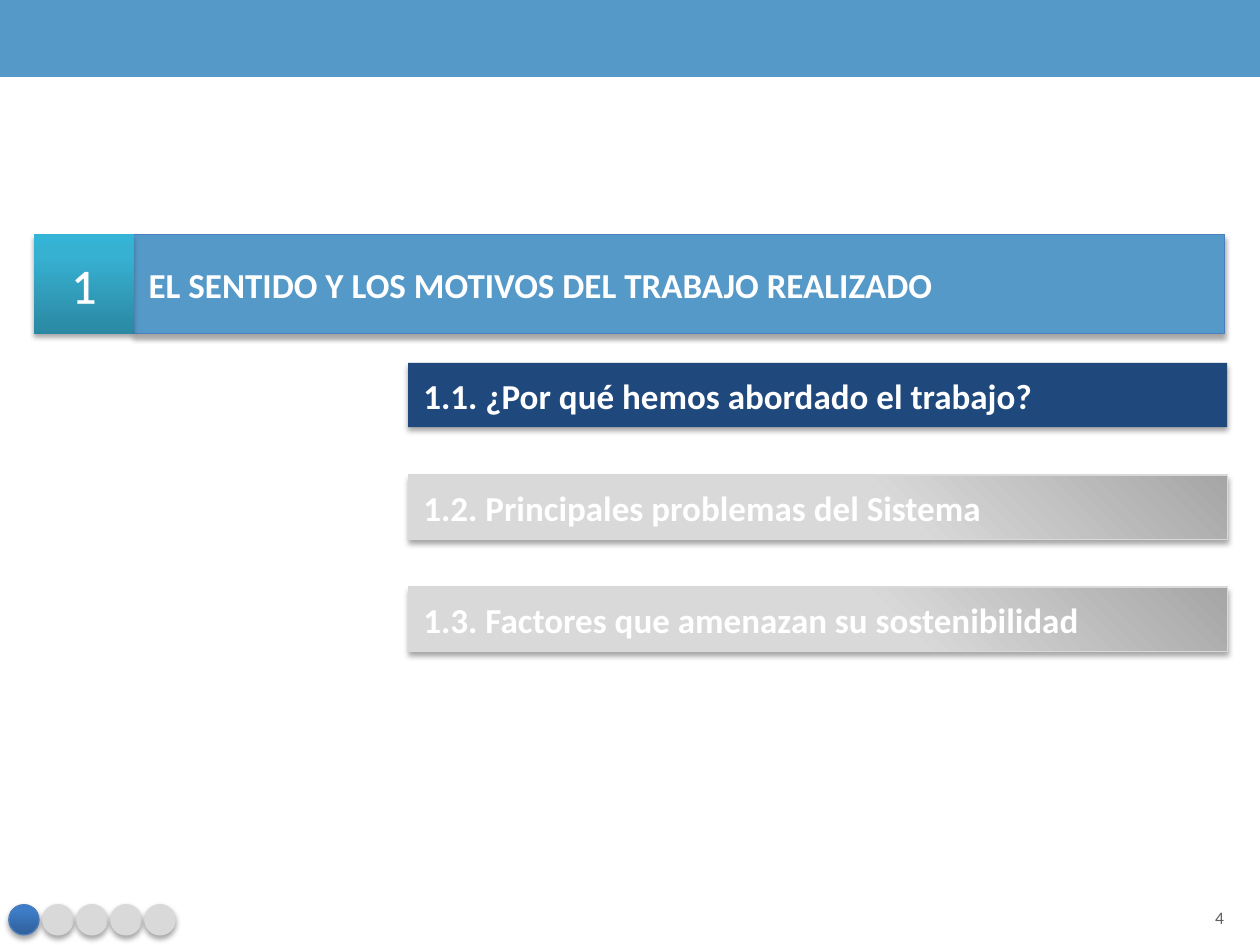
from lxml.etree import SubElement
from pptx import Presentation
from pptx.dml.color import RGBColor
from pptx.enum.shapes import MSO_SHAPE
from pptx.enum.text import MSO_ANCHOR, PP_ALIGN
from pptx.oxml.ns import qn
from pptx.util import Inches, Pt

WHITE, BLUE, NAVY, GREY, EDGE = "FFFFFF", "5599C9", "1F497D", "D9D9D9", "4B7EBC"
TEAL_FADE = ([(0, "2A88A2"), (80, "37B1D2"), (100, "34B4D6")], 270)
BLUE_FADE = ([(0, "2F5F99"), (80, "3D7CC7"), (100, "3A7CCB")], 270)
GREY_FADE = ([(0, "A6A6A6"), (42, GREY), (100, GREY)], 135)

SECTION_NUMBER, SECTION_TITLE = "1", "EL SENTIDO Y LOS MOTIVOS DEL TRABAJO REALIZADO"
TOPICS = [
    ("1.1. ¿Por qué hemos abordado el trabajo?", NAVY, None),
    ("1.2. Principales problemas del Sistema", GREY_FADE, GREY),
    ("1.3. Factores que amenazan su sostenibilidad", GREY_FADE, GREY),
]
PROGRESS = [(BLUE_FADE, EDGE)] + [(GREY, GREY)] * 4
PAGE_NUMBER = "4"

WIDTH, HEIGHT = 10, 7.5
HEADER_HEIGHT = 0.61
SECTION_LEFT, SECTION_TOP, SECTION_HEIGHT, SECTION_WIDTH = 0.27, 1.86, 0.79, 8.66
TOPIC_LEFT, TOPIC_TOP, TOPIC_WIDTH, TOPIC_HEIGHT, TOPIC_PITCH = 3.24, 2.88, 6.5, 0.51, 0.89
DOT_LEFT, DOT_TOP, DOT_SIZE, DOT_PITCH = 0.07, 7.18, 0.24, 0.27


def rgb(value):
    """Turn a hex string into a colour."""
    return RGBColor.from_string(value)


def add_color(parent, value):
    """Append an sRGB colour element to an XML parent."""
    return SubElement(parent, qn("a:srgbClr"), val=value)


def paint(shape, fill, edge):
    """Give a shape a solid or gradient fill and an optional edge."""
    if isinstance(fill, str):
        shape.fill.solid()
        shape.fill.fore_color.rgb = rgb(fill)
    else:
        stops, angle = fill
        shape.fill.gradient()
        gradient = shape._element.spPr.find(qn("a:gradFill"))
        stop_list = gradient.find(qn("a:gsLst"))
        for old_stop in list(stop_list):
            stop_list.remove(old_stop)
        for position, value in stops:
            add_color(SubElement(stop_list, qn("a:gs"), pos=str(position * 1000)), value)
        gradient.find(qn("a:lin")).set("ang", str(angle * 60000))
    if edge:
        shape.line.color.rgb = rgb(edge)
        shape.line.width = Pt(0.75)
    else:
        shape.line.fill.background()


def add_block(shapes, kind, box, fill, edge=None, shadow=True):
    """Add a painted shape with an optional soft drop shadow."""
    block = shapes.add_shape(kind, *map(Inches, box))
    paint(block, fill, edge)
    block.shadow.inherit = False
    if shadow:
        effects = block._element.spPr.find(qn("a:effectLst"))
        outer = SubElement(effects, qn("a:outerShdw"), blurRad=str(Pt(3.1)), dist=str(Pt(1.8)),
                           dir="5400000", rotWithShape="0")
        SubElement(add_color(outer, "000000"), qn("a:alpha"), val="35000")
    return block


def write(shape, text, size, color=WHITE, bold=False, align=PP_ALIGN.LEFT, inset=0.12):
    """Write one vertically centred line into a shape."""
    frame = shape.text_frame
    frame.word_wrap = True
    frame.vertical_anchor = MSO_ANCHOR.MIDDLE
    frame.margin_left = frame.margin_right = Inches(inset)
    frame.margin_top = frame.margin_bottom = Inches(inset)
    paragraph = frame.paragraphs[0]
    paragraph.alignment = align
    run = paragraph.add_run()
    run.text = text
    run.font.name, run.font.size, run.font.bold = "Calibri", Pt(size), bold
    run.font.color.rgb = rgb(color)
    return run


def outline(run, color):
    """Draw a thin outline around the letters of a run."""
    properties = run._r.get_or_add_rPr()
    line = SubElement(properties, qn("a:ln"), w=str(Pt(0.75)))
    add_color(SubElement(line, qn("a:solidFill")), color)
    properties.insert(0, line)


def main():
    """Build the section slide and save it."""
    deck = Presentation()
    deck.slide_width, deck.slide_height = Inches(WIDTH), Inches(HEIGHT)
    shapes = deck.slides.add_slide(deck.slide_layouts[6]).shapes
    rect = MSO_SHAPE.RECTANGLE

    add_block(shapes, rect, (0, 0, WIDTH, HEADER_HEIGHT), BLUE, shadow=False)
    page = shapes.add_textbox(*map(Inches, (9.43, 7.12, 0.5, 0.33)))
    write(page, PAGE_NUMBER, 10, "5F5F5F", align=PP_ALIGN.CENTER, inset=0.05)

    title_left = SECTION_LEFT + SECTION_HEIGHT
    title = add_block(shapes, rect, (title_left, SECTION_TOP, SECTION_WIDTH, SECTION_HEIGHT),
                      BLUE, EDGE)
    write(title, SECTION_TITLE, 20, bold=True)

    for row, (topic, fill, edge) in enumerate(TOPICS):
        top = TOPIC_TOP + row * TOPIC_PITCH
        bar = add_block(shapes, rect, (TOPIC_LEFT, top, TOPIC_WIDTH, TOPIC_HEIGHT), fill, edge)
        write(bar, topic, 20, bold=True)

    number = add_block(shapes, rect, (SECTION_LEFT, SECTION_TOP, SECTION_HEIGHT, SECTION_HEIGHT),
                       TEAL_FADE)
    outline(write(number, SECTION_NUMBER, 28, align=PP_ALIGN.CENTER), WHITE)

    dots = shapes.add_group_shape().shapes
    for column, (fill, edge) in enumerate(PROGRESS):
        left = DOT_LEFT + column * DOT_PITCH
        add_block(dots, MSO_SHAPE.OVAL, (left, DOT_TOP, DOT_SIZE, DOT_SIZE), fill, edge)

    deck.save("out.pptx")


if __name__ == "__main__":
    main()
